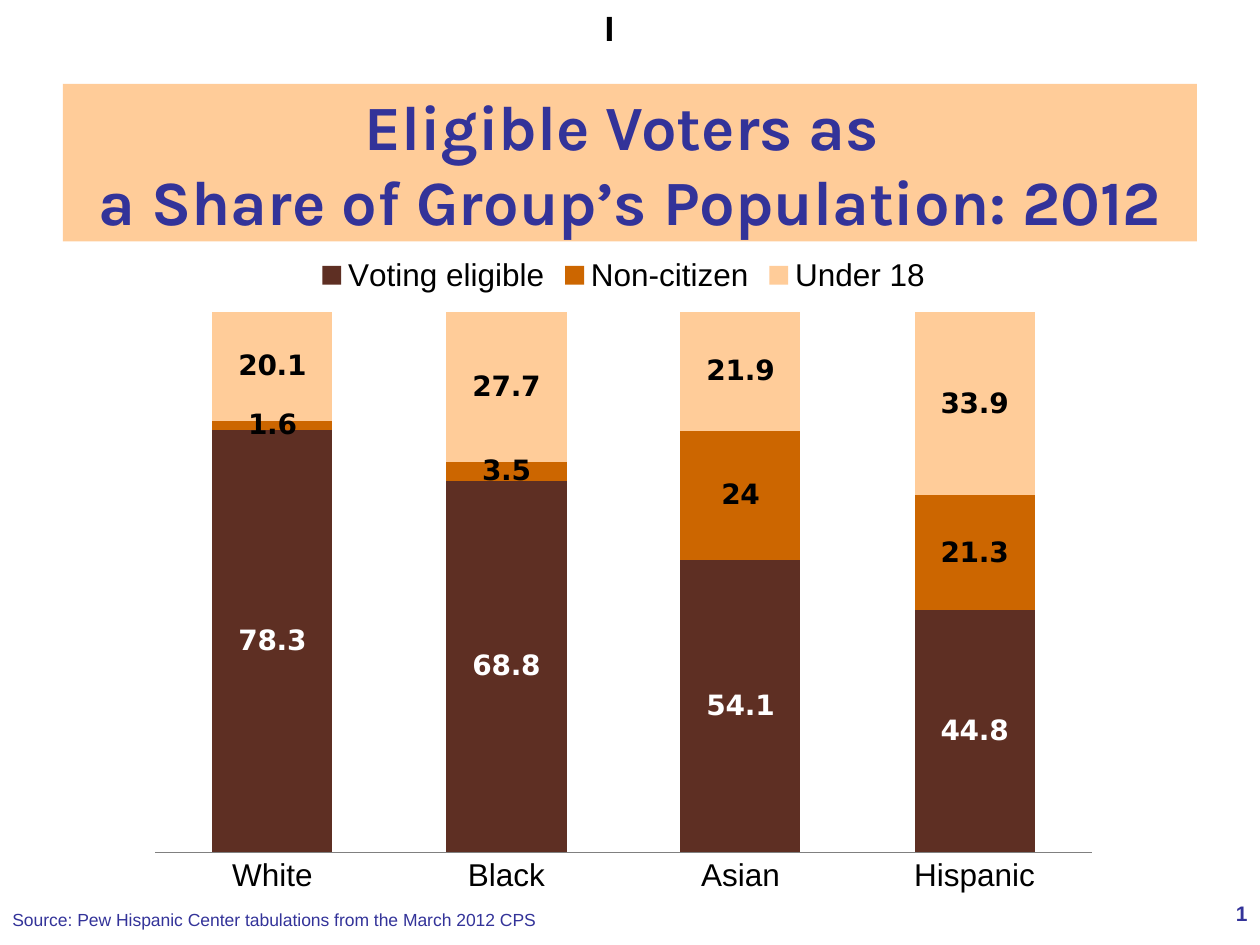
import pptx
import pptx.chart.data
import pptx.dml.color
import pptx.enum.chart
import pptx.enum.shapes
import pptx.enum.text
import pptx.oxml
import pptx.util
from pptx.util import Cm

COLORS = {"peach": "FFCC99", "indigo": "333399", "brown": "5E2F23", "orange": "CC6600",
          "black": "000000", "white": "FFFFFF", "axis": "808080"}
TITLE = "Eligible Voters as \va Share of Group’s Population: 2012"
GROUPS = ["White", "Black", "Asian", "Hispanic"]
SERIES = [
    ("Voting eligible", [78.3, 68.8, 54.1, 44.8], "brown", "white"),
    ("Non-citizen", [1.6, 3.5, 24, 21.3], "orange", "black"),
    ("Under 18", [20.1, 27.7, 21.9, 33.9], "peach", "black"),
]
NOTES = [
    ("Source: Pew Hispanic Center tabulations from the March 2012 CPS",
     (0, 18.19, 11.15, 0.69), 10, "indigo", False, "LEFT", False),
    ("1", (19.48, 18.03, 5.92, 1.02), 12, "indigo", True, "RIGHT", True),
    ("I", (11.23, 0, 2.11, 1.14), 20, "black", True, "CENTER", True),
]
PLOT = {"x": 0.02, "y": 0.106, "w": 0.96, "h": 0.813}


def rgb(name):
    return pptx.dml.color.RGBColor.from_string(COLORS[name])


def style(font, size, color, bold=False, name="Arial"):
    font.size = pptx.util.Pt(size)
    font.bold = bold
    font.name = name
    font.color.rgb = rgb(color)


def write(sp, text, size, color, bold, align, wrap, name="Arial"):
    tf = sp.text_frame
    tf.word_wrap = wrap
    p = tf.paragraphs[0]
    p.text = text
    p.alignment = getattr(pptx.enum.text.PP_ALIGN, align)
    for r in p.runs:
        style(r.font, size, color, bold, name)
    return tf


def add_title(s):
    sp = s.shapes.add_shape(pptx.enum.shapes.MSO_SHAPE.RECTANGLE,
                            Cm(1.27), Cm(1.69), Cm(22.86), Cm(3.18))
    sp.shadow.inherit = False
    sp.fill.solid()
    sp.fill.fore_color.rgb = rgb("peach")
    sp.line.fill.background()
    tf = write(sp, TITLE, 36, "indigo", True, "CENTER", True, "Karla")
    tf.vertical_anchor = pptx.enum.text.MSO_ANCHOR.MIDDLE


def add_voter_chart(s):
    data = pptx.chart.data.CategoryChartData()
    data.categories = GROUPS
    for name, values, _, _ in SERIES:
        data.add_series(name, values)
    enum = pptx.enum.chart
    chart = s.shapes.add_chart(enum.XL_CHART_TYPE.COLUMN_STACKED_100,
                               Cm(2.74), Cm(4.88), Cm(19.66), Cm(13.39), data).chart
    style(chart.font, 18, "black")
    chart.has_title = False
    chart.has_legend = True
    chart.legend.position = enum.XL_LEGEND_POSITION.TOP
    chart.legend.include_in_layout = False
    style(chart.legend.font, 18, "black")

    chart.value_axis.visible = False
    chart.value_axis.has_major_gridlines = False
    chart.value_axis.maximum_scale = 1
    axis = chart.category_axis
    axis.major_tick_mark = enum.XL_TICK_MARK.NONE
    axis.format.line.color.rgb = rgb("axis")
    style(axis.tick_labels.font, 18, "black")

    plot = chart.plots[0]
    plot.gap_width = 95
    plot.overlap = 100
    plot.vary_by_categories = False
    for series, (_, _, fill, ink) in zip(plot.series, SERIES):
        series.format.fill.solid()
        series.format.fill.fore_color.rgb = rgb(fill)
        labels = series.data_labels
        labels.show_value = True
        style(labels.font, 16, ink, True, "DejaVu Sans")

    ns = "http://schemas.openxmlformats.org/drawingml/2006/chart"
    modes = "".join(f'<c:{k}Mode val="edge"/>' for k in "xy")
    sizes = "".join(f'<c:{k} val="{v}"/>' for k, v in PLOT.items())
    layout = pptx.oxml.parse_xml(
        f'<c:layout xmlns:c="{ns}"><c:manualLayout><c:layoutTarget val="inner"/>'
        f'{modes}{sizes}</c:manualLayout></c:layout>')
    area = chart._chartSpace.chart.plotArea
    for old in area.findall(f"{{{ns}}}layout"):
        area.remove(old)
    area.insert(0, layout)


def main():
    prs = pptx.Presentation()
    prs.slide_width, prs.slide_height = Cm(25.4), Cm(19.05)
    s = prs.slides.add_slide(prs.slide_layouts[6])
    add_title(s)
    add_voter_chart(s)
    for text, box, size, color, bold, align, wrap in NOTES:
        sp = s.shapes.add_textbox(*map(Cm, box))
        write(sp, text, size, color, bold, align, wrap)
    prs.save("out.pptx")


if __name__ == "__main__":
    main()
